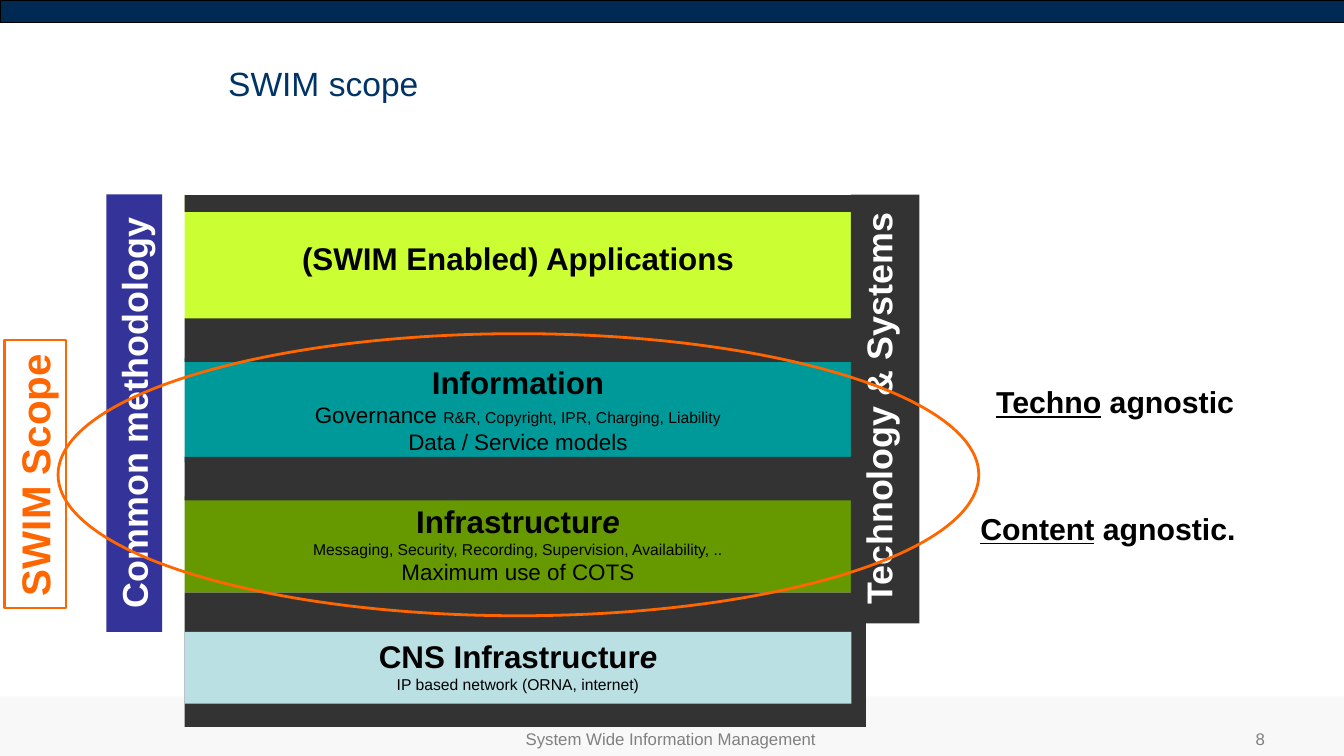
"""Builds the SWIM scope slide: layered architecture with its scope outlined."""
from pptx import Presentation
from pptx.dml.color import RGBColor
from pptx.enum.shapes import MSO_SHAPE
from pptx.enum.text import MSO_ANCHOR, PP_ALIGN
from pptx.util import Inches, Pt

COLORS = {
    "navy": "002A54", "footer": "F8F8F8", "gray": "808080", "title": "003366",
    "dark": "333333", "black": "000000", "white": "FFFFFF", "orange": "FF6600",
    "indigo": "333399", "lime": "CCFF33", "teal": "009999", "green": "669900",
    "ice": "BBE0E3",
}
STACK_LEFT, STACK_WIDTH = 2.29, 8.27
HEADING = {"size": 28, "bold": True}
HEADING_END = {"size": 28, "bold": True, "italic": True}
MAIN = {"size": 20}
DETAIL = {"size": 14}

LAYERS = [
    (6.16, 1.19, "green", MSO_ANCHOR.TOP, [
        [("Infrastructur", HEADING), ("e", HEADING_END)],
        [("Messaging, Security, Recording, Supervision, Availability, ..", DETAIL)],
        [("Maximum use of COTS", MAIN)]]),
    (2.42, 1.56, "lime", MSO_ANCHOR.MIDDLE, [
        [("(SWIM Enabled) Applications", HEADING)]]),
    (4.44, 1.29, "teal", MSO_ANCHOR.TOP, [
        [("Information", HEADING)],
        [("Governance ", MAIN), ("R&R, Copyright, IPR, Charging, Liability", DETAIL)],
        [("Data / Service models", MAIN)]]),
    (7.84, 0.89, "ice", MSO_ANCHOR.TOP, [
        [("CNS Infrastructur", HEADING), ("e", HEADING_END)],
        [("IP based network (ORNA, internet)", DETAIL)]]),
]
BANDS = [(3.95, 0.54), (5.67, 0.54), (2.42, 0.21)]
REMARKS = [
    ("Techno", " agnostic", (12.19, 4.69, 3.28, 0.6), PP_ALIGN.CENTER),
    ("Content", " agnostic.", (12.01, 6.26, 3.5, 1.06), PP_ALIGN.LEFT),
]
FOOTERS = [
    ("System Wide Information Management", (4.52, 8.98, 7.6, 0.37), PP_ALIGN.CENTER),
    ("8", (14.97, 8.98, 0.87, 0.37), PP_ALIGN.RIGHT),
]


def color(name):
    return RGBColor.from_string(COLORS[name])


def add_figure(page, frame, fill=None, line=None, width=1, kind=MSO_SHAPE.RECTANGLE, rotation=0):
    figure = page.shapes.add_shape(kind, *map(Inches, frame))
    figure.shadow.inherit = False
    figure.rotation = rotation
    if fill:
        figure.fill.solid()
        figure.fill.fore_color.rgb = color(fill)
    else:
        figure.fill.background()
    if line:
        figure.line.color.rgb = color(line)
        figure.line.width = Pt(width)
    else:
        figure.line.fill.background()
    return figure


def write(box, paragraphs, align=PP_ALIGN.CENTER, anchor=MSO_ANCHOR.TOP, wrap=True, ink="black"):
    frame = box.text_frame
    frame.word_wrap = wrap
    frame.vertical_anchor = anchor
    frame.margin_left = frame.margin_right = Inches(0.15)
    frame.margin_top = frame.margin_bottom = Inches(0.07)
    for index, spans in enumerate(paragraphs):
        para = frame.add_paragraph() if index else frame.paragraphs[0]
        para.alignment = align
        for text, style in spans:
            span = para.add_run()
            span.text = text
            span.font.name = "Arial"
            span.font.size = Pt(style["size"])
            span.font.bold = style.get("bold", False)
            span.font.italic = style.get("italic", False)
            span.font.underline = style.get("underline", False)
            span.font.color.rgb = color(ink)


def add_label(page, frame, paragraphs, rotation=0, **style):
    box = page.shapes.add_textbox(*map(Inches, frame))
    box.rotation = rotation
    write(box, paragraphs, **style)


def main():
    deck = Presentation()
    deck.slide_width, deck.slide_height = Inches(16.67), Inches(9.38)
    page = deck.slides.add_slide(deck.slide_layouts[5])

    add_figure(page, (0, 0, 16.67, 0.28), "navy", "black", 0.75)
    add_figure(page, (0, 8.64, 16.67, 0.74), "footer")

    title = page.shapes.title
    title.left, title.top, title.width, title.height = map(Inches, (2.68, 0.5, 9.97, 1.06))
    write(title, [[("SWIM scope", {"size": 30})]], align=PP_ALIGN.LEFT,
          anchor=MSO_ANCHOR.MIDDLE, ink="title")

    add_figure(page, (STACK_LEFT, 7.35, 8.45, 1.67), "dark")
    for top, height, fill, anchor, paragraphs in LAYERS:
        layer = add_figure(page, (STACK_LEFT, top, STACK_WIDTH, height), fill)
        write(layer, paragraphs, anchor=anchor)
    for top, height in BANDS:
        add_figure(page, (STACK_LEFT, top, STACK_WIDTH, height), "dark")

    methodology = add_figure(page, (-1.05, 4.78, 5.43, 0.69), "indigo", rotation=270)
    write(methodology, [[("Common methodology", {"size": 32, "bold": True})]], ink="white")
    add_figure(page, (8.32, 4.65, 5.32, 0.85), "dark", rotation=270)
    add_label(page, (8.3, 4.71, 5.2, 0.69),
              [[("Technology & Systems", {"size": 32, "bold": True})]],
              rotation=270, align=PP_ALIGN.LEFT, wrap=False, ink="white")
    scope = add_figure(page, (-1.23, 5.5, 3.33, 0.76), line="orange", width=2, rotation=270)
    write(scope, [[("SWIM Scope", {"size": 36, "bold": True})]],
          align=PP_ALIGN.LEFT, wrap=False, ink="orange")
    add_figure(page, (0.72, 4.14, 11.42, 3.5), line="orange", width=2.5, kind=MSO_SHAPE.OVAL)

    for subject, rest, frame, align in REMARKS:
        style = {"size": 27, "bold": True}
        add_label(page, frame, [[(subject, {**style, "underline": True}), (rest, style)]],
                  align=align, wrap=False)
    for text, frame, align in FOOTERS:
        add_label(page, frame, [[(text, {"size": 15})]], align=align,
                  anchor=MSO_ANCHOR.MIDDLE, ink="gray")

    deck.save("out.pptx")


if __name__ == "__main__":
    main()
